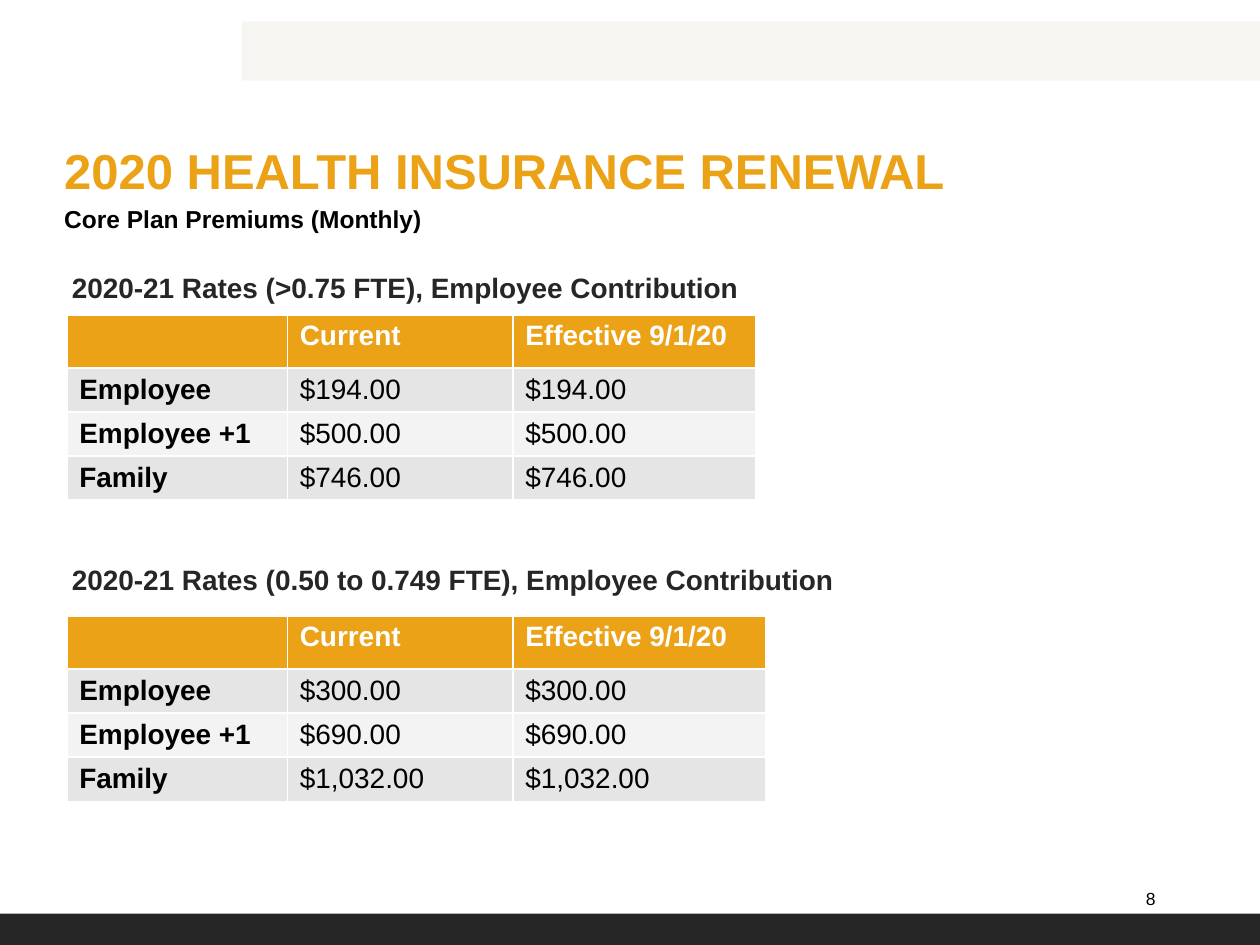
from lxml import etree
from pptx import Presentation
from pptx.dml.color import RGBColor
from pptx.enum.shapes import MSO_SHAPE
from pptx.enum.text import MSO_ANCHOR, PP_ALIGN
from pptx.oxml.ns import qn
from pptx.util import Inches, Pt

RECTANGLE = MSO_SHAPE.RECTANGLE
TOP, MIDDLE, BOTTOM = MSO_ANCHOR.TOP, MSO_ANCHOR.MIDDLE, MSO_ANCHOR.BOTTOM
LEFT, RIGHT = PP_ALIGN.LEFT, PP_ALIGN.RIGHT

ORANGE = RGBColor(0xEB, 0xA2, 0x17)
CREAM = RGBColor(0xF7, 0xF5, 0xF2)
CHARCOAL = RGBColor(0x26, 0x26, 0x26)
BLACK = RGBColor(0, 0, 0)
WHITE = RGBColor(0xFF, 0xFF, 0xFF)
BANDS = (RGBColor(0xE5, 0xE5, 0xE6), RGBColor(0xF3, 0xF3, 0xF3))

HEADER = ("", "Current", "Effective 9/1/20")
TIERS = ("Employee", "Employee +1", "Family")


def write_text(frame, text, size=16, color=BLACK, bold=False, align=LEFT,
               line_spacing=None, before=None, after=None):
    paragraph = frame.paragraphs[0]
    paragraph.alignment = align
    paragraph.line_spacing = line_spacing
    paragraph.space_before = before
    paragraph.space_after = after
    paragraph.font.size = Pt(size)
    if text:
        run = paragraph.add_run()
        run.text = text
        run.font.name = "Arial"
        run.font.size = Pt(size)
        run.font.bold = bold
        run.font.color.rgb = color


class SlideBuilder:
    """Holds the slide and the table style."""

    border_width = Pt(1)
    header_height = Inches(0.42)
    row_height = Inches(0.35)

    def __init__(self, slide):
        self.slide = slide

    def bar(self, left, top, width, height, color):
        bar = self.slide.shapes.add_shape(
            RECTANGLE, Inches(left), Inches(top), Inches(width), Inches(height))
        bar.shadow.inherit = False
        bar.fill.solid()
        bar.fill.fore_color.rgb = color
        bar.line.fill.background()

    def text(self, text, left, top, width, height, anchor=TOP,
             right_inset=0, **text_format):
        box = self.slide.shapes.add_textbox(
            Inches(left), Inches(top), Inches(width), Inches(height))
        frame = box.text_frame
        frame.word_wrap = True
        frame.vertical_anchor = anchor
        frame.margin_left = frame.margin_top = frame.margin_bottom = 0
        frame.margin_right = Inches(right_inset)
        write_text(frame, text, **text_format)

    def borders(self, cell):
        properties = cell._tc.get_or_add_tcPr()
        for position, side in enumerate(("lnL", "lnR", "lnT", "lnB")):
            line = etree.Element(qn(f"a:{side}"), w=str(self.border_width))
            fill = etree.SubElement(line, qn("a:solidFill"))
            etree.SubElement(fill, qn("a:srgbClr"), val=str(WHITE))
            properties.insert(position, line)

    def rate_table(self, left, top, column_widths, rates):
        rows = [HEADER] + [(tier, rate, rate) for tier, rate in zip(TIERS, rates)]
        table = self.slide.shapes.add_table(
            len(rows), len(HEADER), Inches(left), Inches(top),
            Inches(sum(column_widths)),
            self.header_height + self.row_height * len(TIERS)).table
        for column, width in zip(table.columns, column_widths):
            column.width = Inches(width)
        for r, values in enumerate(rows):
            is_header = r == 0
            table.rows[r].height = self.header_height if is_header else self.row_height
            for c, value in enumerate(values):
                cell = table.cell(r, c)
                cell.margin_top = cell.margin_bottom = Inches(0.04)
                cell.vertical_anchor = TOP if is_header else MIDDLE
                cell.fill.solid()
                cell.fill.fore_color.rgb = ORANGE if is_header else BANDS[(r - 1) % 2]
                self.borders(cell)
                write_text(cell.text_frame, value, bold=is_header or c == 0,
                           color=WHITE if is_header else BLACK)


def main():
    presentation = Presentation()
    presentation.slide_width = Inches(10)
    presentation.slide_height = Inches(7.5)
    builder = SlideBuilder(
        presentation.slides.add_slide(presentation.slide_layouts[6]))

    # Top band and footer bar
    builder.bar(1.92, 0.17, 8.08, 0.47, CREAM)
    builder.bar(0, 7.25, 10, 0.25, CHARCOAL)

    # Title and subtitle
    builder.text("2020 HEALTH INSURANCE RENEWAL", 0.51, 1.08, 8.8, 0.5,
                 anchor=BOTTOM, size=28, color=ORANGE, bold=True)
    builder.text("Core Plan Premiums (Monthly)", 0.51, 1.59, 8.8, 0.33,
                 size=14, bold=True, line_spacing=1.14, after=Pt(6))

    # Rates by employment level: heading and table
    sections = (
        ("2020-21 Rates (>0.75 FTE), Employee Contribution", 2.11, 2.5, 1.93,
         ("$194.00", "$500.00", "$746.00")),
        ("2020-21 Rates (0.50 to 0.749 FTE), Employee Contribution", 4.43, 4.89, 2.01,
         ("$300.00", "$690.00", "$1,032.00")),
    )
    for heading, heading_top, table_top, last_width, rates in sections:
        builder.text(heading, 0.57, heading_top, 8.8, 0.35, color=CHARCOAL,
                     bold=True, line_spacing=1.14, after=Pt(6))
        builder.rate_table(0.53, table_top, (1.75, 1.79, last_width), rates)

    # Slide number
    builder.text("8", 8.94, 6.93, 0.33, 0.4, anchor=MIDDLE, right_inset=0.1,
                 size=10, align=RIGHT)

    presentation.save("out.pptx")


if __name__ == "__main__":
    main()
